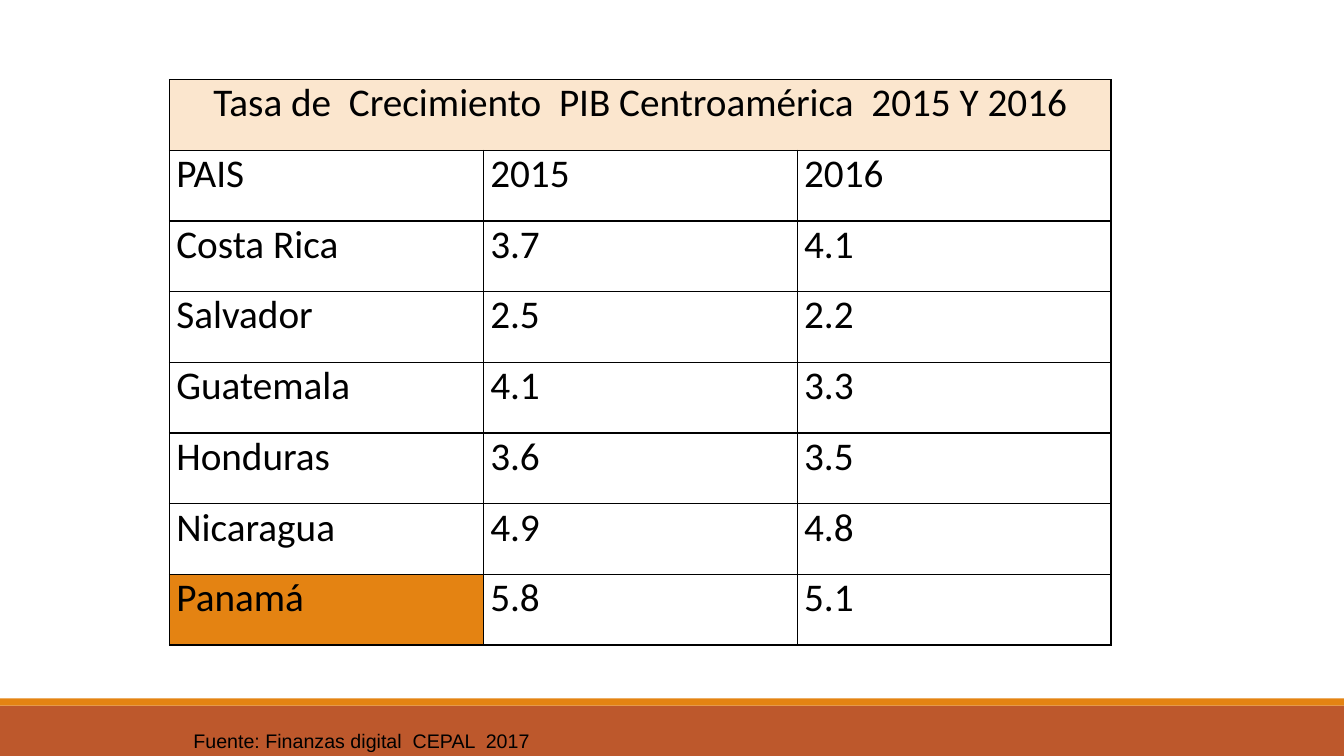
import lxml.etree
import pptx
import pptx.dml.color
import pptx.enum.shapes
import pptx.enum.text
import pptx.oxml.ns
import pptx.util

Inches = pptx.util.Inches
RGBColor = pptx.dml.color.RGBColor

BLACK = RGBColor(0x00, 0x00, 0x00)
CREAM = RGBColor(0xFB, 0xE6, 0xCE)
ORANGE = RGBColor(0xE4, 0x83, 0x12)
RUST = RGBColor(0xBD, 0x58, 0x2C)

HEADING = "Tasa de  Crecimiento  PIB Centroamérica  2015 Y 2016"
GROWTH_ROWS = [
    ("PAIS", "2015", "2016"),
    ("Costa Rica", "3.7", "4.1"),
    ("Salvador", "2.5", "2.2"),
    ("Guatemala", "4.1", "3.3"),
    ("Honduras", "3.6", "3.5"),
    ("Nicaragua", "4.9", "4.8"),
    ("Panamá", "5.8", "5.1"),
]
SOURCE_NOTE = "Fuente: Finanzas digital  CEPAL  2017"


def add_band(slide, left, top, width, height, color):
    """Draw a plain filled rectangle."""
    band = slide.shapes.add_shape(
        pptx.enum.shapes.MSO_SHAPE.RECTANGLE, left, top, width, height
    )
    band.shadow.inherit = False
    band.fill.solid()
    band.fill.fore_color.rgb = color
    band.line.fill.background()


def add_footer(slide, left, top, width, height):
    """Draw the two footer bands and the source note on them."""
    stripe_height = Inches(0.07)
    add_band(slide, left, top + stripe_height, width, height - stripe_height, RUST)
    add_band(slide, left, top, width, stripe_height, ORANGE)
    note = slide.shapes.add_textbox(
        left + Inches(1.82), top + Inches(0.27), Inches(3.56), Inches(0.3)
    )
    frame = note.text_frame
    frame.word_wrap = False
    frame.vertical_anchor = pptx.enum.text.MSO_ANCHOR.MIDDLE
    paragraph = frame.paragraphs[0]
    paragraph.text = SOURCE_NOTE
    paragraph.font.name = "Arial"
    paragraph.font.size = pptx.util.Pt(14)
    paragraph.font.color.rgb = BLACK


def add_borders(cell):
    """Give a cell one-point black borders on all sides."""
    properties = cell._tc.get_or_add_tcPr()
    for position, side in enumerate(("a:lnL", "a:lnR", "a:lnT", "a:lnB")):
        line = lxml.etree.Element(
            pptx.oxml.ns.qn(side), w=str(pptx.util.Pt(1))
        )
        fill = lxml.etree.SubElement(line, pptx.oxml.ns.qn("a:solidFill"))
        lxml.etree.SubElement(fill, pptx.oxml.ns.qn("a:srgbClr"), val=str(BLACK))
        properties.insert(position, line)


def format_cell(cell, text, color=None):
    """Write a cell's text and set its fill, margins and borders."""
    cell.margin_left = cell.margin_right = Inches(0.07)
    cell.margin_top = cell.margin_bottom = 0
    if color is None:
        cell.fill.background()
    else:
        cell.fill.solid()
        cell.fill.fore_color.rgb = color
    add_borders(cell)
    paragraph = cell.text_frame.paragraphs[0]
    paragraph.text = text
    paragraph.font.name = "Calibri"
    paragraph.font.size = pptx.util.Pt(28)
    paragraph.font.color.rgb = BLACK


def add_growth_table(slide, left, top, width, height):
    """Build the growth table under its merged heading row."""
    row_count, column_count = len(GROWTH_ROWS) + 1, len(GROWTH_ROWS[0])
    table = slide.shapes.add_table(
        row_count, column_count, left, top, width, height
    ).table
    table.first_row = False
    table.horz_banding = False
    heading = table.cell(0, 0)
    heading.merge(table.cell(0, column_count - 1))
    for column in range(column_count):
        format_cell(table.cell(0, column), "" if column else HEADING, CREAM)
    heading.text_frame.paragraphs[0].alignment = pptx.enum.text.PP_ALIGN.CENTER
    for row, values in enumerate(GROWTH_ROWS, start=1):
        for column, value in enumerate(values):
            color = ORANGE if value == "Panamá" else None
            format_cell(table.cell(row, column), value, color)


def main():
    """Build the slide and save it."""
    presentation = pptx.Presentation()
    presentation.slide_width = Inches(13.33)
    presentation.slide_height = Inches(7.5)
    slide = presentation.slides.add_slide(presentation.slide_layouts[6])
    add_footer(slide, 0, Inches(6.93), presentation.slide_width, Inches(0.57))
    add_growth_table(slide, Inches(1.68), Inches(0.79), Inches(9.34), Inches(5.61))
    presentation.save("out.pptx")


if __name__ == "__main__":
    main()
